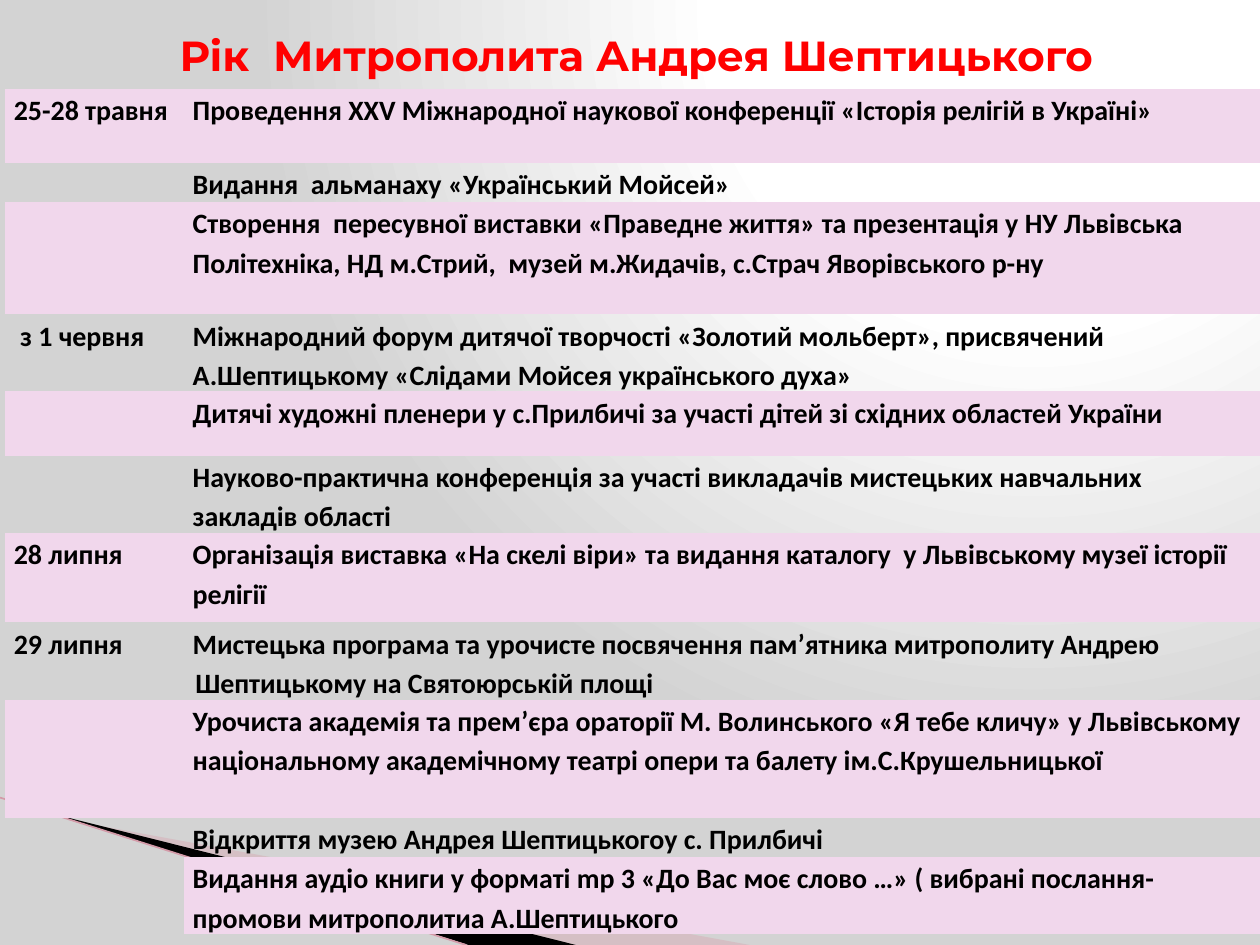
from lxml import etree
from pptx import Presentation
from pptx.dml.color import RGBColor
from pptx.enum.shapes import MSO_CONNECTOR
from pptx.enum.text import MSO_ANCHOR, PP_ALIGN
from pptx.oxml import parse_xml
from pptx.oxml.ns import nsdecls, qn
from pptx.util import Inches, Pt

STRAIGHT = MSO_CONNECTOR.STRAIGHT
MIDDLE = MSO_ANCHOR.MIDDLE
CENTER = PP_ALIGN.CENTER
COLORS = {"title": "FF0000", "text": "000000", "band": "F1D7EC", "light": "FFFFFF",
          "shade": "D3D3D3", "blush": "D8A3AF", "ray": "D39AA8"}
NO_STYLE = "{2D5ABB26-0587-4C30-8999-92F81FD0307C}"


def rgb(name):
    return RGBColor.from_string(COLORS[name])


def style(paragraph, font_name, size, color):
    font = paragraph.font
    font.name, font.size, font.bold = font_name, Pt(size), True
    font.color.rgb = rgb(color)


prs = Presentation()
prs.slide_width, prs.slide_height = Inches(10), Inches(7.5)
W, H = prs.slide_width, prs.slide_height
slide = prs.slides.add_slide(prs.slide_layouts[6])
shapes = slide.shapes

stops = "".join(f'<a:gs pos="{share * 1000}"><a:srgbClr val="{COLORS[name]}"/></a:gs>'
                for share, name in [(0, "light"), (40, "light"), (100, "shade")])
slide.element.cSld.insert(0, parse_xml(
    f'<p:bg {nsdecls("p", "a")}><p:bgPr><a:gradFill rotWithShape="1"><a:gsLst>{stops}</a:gsLst>'
    '<a:path path="circle"><a:fillToRect l="65000" t="0" r="0" b="98000"/></a:path>'
    '</a:gradFill><a:effectLst/></p:bgPr></p:bg>'))

wedges = [
    ("blush", 40, [(0.055, 0.868), (0.595, 1), (0.456, 1), (0.055, 0.867)]),
    ("text", 100, [(0.053, 0.865), (0.457, 1), (0.372, 1), (0.054, 0.867)]),
]
for color, opacity, corners in wedges:
    points = [(int(W * x), int(H * y)) for x, y in corners]
    outline = shapes.build_freeform(*points[0], scale=1.0)
    outline.add_line_segments(points[1:], close=True)
    wedge = outline.convert_to_shape()
    wedge.shadow.inherit = False
    wedge.fill.solid()
    wedge.fill.fore_color.rgb = rgb(color)
    wedge.line.fill.background()
    if opacity < 100:
        tint = wedge.element.spPr.find(".//" + qn("a:srgbClr"))
        etree.SubElement(tint, qn("a:alpha")).set("val", str(opacity * 1000))

ray = shapes.add_connector(STRAIGHT, 0, int(H * 0.844), int(W * 0.37), H)
ray.line.color.rgb = rgb("ray")
ray.line.width = Pt(0.95)
etree.SubElement(ray.element.spPr, qn("a:effectLst"))

heading = shapes.add_textbox(int(W * 0.055), int(H * 0.021), int(W * 0.9), int(H * 0.073)).text_frame
heading.word_wrap = True
heading.vertical_anchor = MIDDLE
heading.text = "Рік  Митрополита Андрея Шептицького"
heading.paragraphs[0].alignment = CENTER
style(heading.paragraphs[0], "Montserrat", 24, "title")

events = [
    (0.59, "25-28 травня", "Проведення ХХV Міжнародної наукової конференції «Історія релігій в Україні»"),
    (0.31, "", "Видання  альманаху «Український Мойсей»"),
    (0.89, "", "Створення  пересувної виставки «Праведне життя» та презентація у НУ Львівська "
               "Політехніка, НД м.Стрий,  музей м.Жидачів, с.Страч Яворівського р-ну"),
    (0.6, " з 1 червня", "Міжнародний форум дитячої творчості «Золотий мольберт», присвячений "
                         "А.Шептицькому «Слідами Мойсея українського духа»"),
    (0.51, "", "Дитячі художні пленери у с.Прилбичі за участі дітей зі східних областей України"),
    (0.6, "", "Науково-практична конференція за участі викладачів мистецьких навчальних закладів області"),
    (0.71, "28 липня", "Організація виставка «На скелі віри» та видання каталогу  у Львівському "
                       "музеї історії релігії"),
    (0.6, "29 липня", "Мистецька програма та урочисте посвячення пам’ятника митрополиту Андрею "
                      "Шептицькому на Святоюрській площі"),
    (0.94, "", "Урочиста академія та прем’єра ораторії М. Волинського «Я тебе кличу» у Львівському "
               "національному академічному театрі опери та балету ім.С.Крушельницької"),
    (0.31, "", "Відкриття музею Андрея Шептицькогоу с. Прилбичі"),
    (0.6, "", "Видання аудіо книги у форматі mp 3 «До Вас моє слово …» ( вибрані "
              "послання-промови митрополитиа А.Шептицького"),
]
schedule = shapes.add_table(len(events), 2, int(W * 0.004), int(H * 0.0939),
                            int(W * 0.996), Inches(sum(event[0] for event in events))).table
schedule.first_row = schedule.horz_banding = False
schedule._tbl.tblPr.find(qn("a:tableStyleId")).text = NO_STYLE
schedule.columns[0].width, schedule.columns[1].width = int(W * 0.142), int(W * 0.854)

for row, (height, date, event) in enumerate(events):
    schedule.rows[row].height = Inches(height)
    for column, words in enumerate((date, event)):
        cell = schedule.cell(row, column)
        cell.margin_left = cell.margin_right = Inches(0.07)
        cell.margin_top = cell.margin_bottom = 0
        if row % 2 == 0 and (column or row < len(events) - 1):
            cell.fill.solid()
            cell.fill.fore_color.rgb = rgb("band")
        else:
            cell.fill.background()
        cell.text = words
        entry = cell.text_frame.paragraphs[0]
        if words:
            entry.line_spacing = 1.15
            entry.space_after = Pt(10)
        if column and date == "29 липня":
            hanging = entry._p.get_or_add_pPr()
            hanging.set("marL", str(Inches(0.02)))
            hanging.set("indent", str(-Inches(0.02)))
        style(entry, "Calibri", 16, "text")

prs.save("out.pptx")
